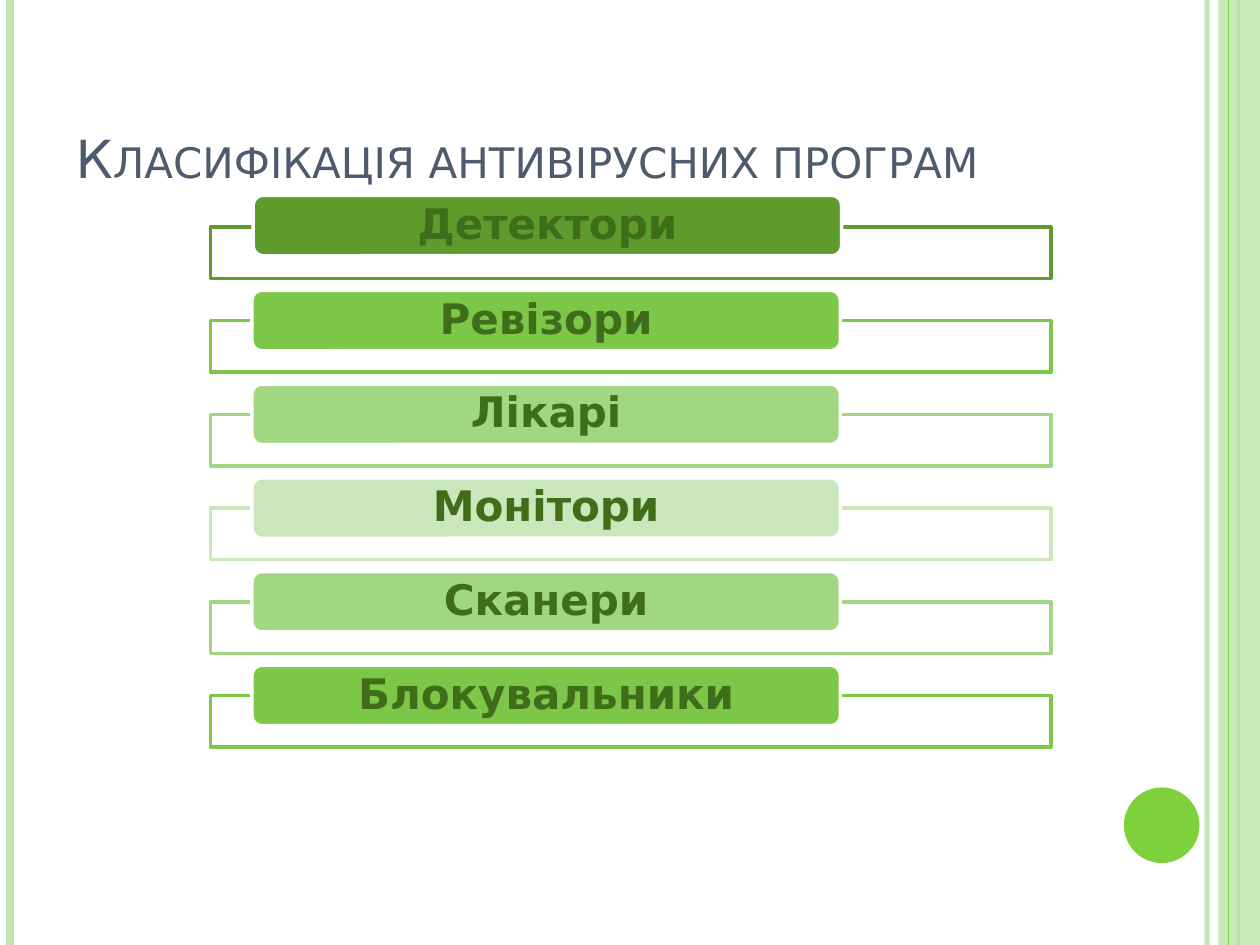
from lxml.etree import SubElement
from pptx import Presentation
from pptx.dml.color import RGBColor
from pptx.enum.shapes import MSO_CONNECTOR, MSO_SHAPE
from pptx.enum.text import MSO_ANCHOR, MSO_AUTO_SIZE, PP_ALIGN
from pptx.oxml.ns import qn
from pptx.util import Inches, Pt

COLORS = {
    "pale": "C0E5AF", "accent": "7FD13B", "title": "4E5B6F", "label": "3F6D19",
    "white": "FFFFFF", "dark": "5E9B2C", "mid": "7CC748", "soft": "A1D683",
    "light": "C9E7BB",
}
FONT = "DejaVu Sans"


def set_alpha(color_format, percent):
    color = color_format._xFill.find(qn("a:srgbClr"))
    SubElement(color, qn("a:alpha")).set("val", str(percent * 1000))


def add_box(kind, left, top, width, height, fill, line=None):
    box = slide.shapes.add_shape(
        kind, Inches(left), Inches(top), Inches(width), Inches(height))
    box.shadow.inherit = False
    box.fill.solid()
    box.fill.fore_color.rgb = RGBColor.from_string(COLORS[fill])
    if line:
        box.line.color.rgb = RGBColor.from_string(COLORS[line])
        box.line.width = Pt(2)
    else:
        box.line.fill.background()
    return box


prs = Presentation()
prs.slide_width = Inches(10)
prs.slide_height = Inches(7.5)
slide = prs.slides.add_slide(prs.slide_layouts[5])

stripes = [
    (9.58, 3, "pale", 93),
    (0.08, 4.5, "pale", 100),
    (9.83, 1.5, "accent", 100),
    (9.75, 0.75, "accent", 100),
]
for x, weight, color, opacity in stripes:
    if x == 9.75:
        band = add_box(MSO_SHAPE.RECTANGLE, 9.67, 0, 0.33, 7.5, "pale")
        set_alpha(band.fill.fore_color, 87)
    stripe = slide.shapes.add_connector(
        MSO_CONNECTOR.STRAIGHT, Inches(x), 0, Inches(x), Inches(7.5))
    stripe.line.color.rgb = RGBColor.from_string(COLORS[color])
    stripe.line.width = Pt(weight)
    if opacity < 100:
        set_alpha(stripe.line.color, opacity)
    SubElement(stripe._element.spPr, qn("a:effectLst"))

add_box(MSO_SHAPE.OVAL, 8.92, 6.25, 0.6, 0.6, "accent")

title = slide.shapes.title
title.left, title.top = Inches(0.5), Inches(0.3)
title.width, title.height = Inches(8.17), Inches(1.25)
title.text_frame.text = "Класифікація антивірусних програм"
title.text_frame.vertical_anchor = MSO_ANCHOR.BOTTOM
title.text_frame.auto_size = MSO_AUTO_SIZE.NONE
heading = title.text_frame.paragraphs[0]
heading.alignment = PP_ALIGN.LEFT
heading_font = heading.runs[0].font
heading_font.name = FONT
heading_font.size = Pt(30)
heading_font.color.rgb = RGBColor.from_string(COLORS["title"])
heading_font._element.set("cap", "small")

programs = [
    ("Детектори", "dark"), ("Ревізори", "mid"), ("Лікарі", "soft"),
    ("Монітори", "light"), ("Сканери", "soft"), ("Блокувальники", "mid"),
]
for row, (name, color) in enumerate(programs):
    frame_top = 1.8 + 0.744 * row
    frame = add_box(MSO_SHAPE.RECTANGLE, 1.67, frame_top, 6.67, 0.41, "white", color)
    set_alpha(frame.fill.fore_color, 90)

    label = add_box(MSO_SHAPE.ROUNDED_RECTANGLE, 2.01 if row == 0 else 2,
                    1.55 if row == 0 else frame_top - 0.24, 4.67, 0.48, color, "white")
    text = label.text_frame
    text.text = name
    text.word_wrap = True
    text.vertical_anchor = MSO_ANCHOR.MIDDLE
    text.margin_left = text.margin_right = Inches(0.18)
    text.margin_top = text.margin_bottom = 0
    line = text.paragraphs[0]
    line.alignment = PP_ALIGN.CENTER
    line.line_spacing = 0.9
    font = line.runs[0].font
    font.name = FONT
    font.size = Pt(24)
    font.bold = True
    font.color.rgb = RGBColor.from_string(COLORS["label"])

prs.save("out.pptx")
